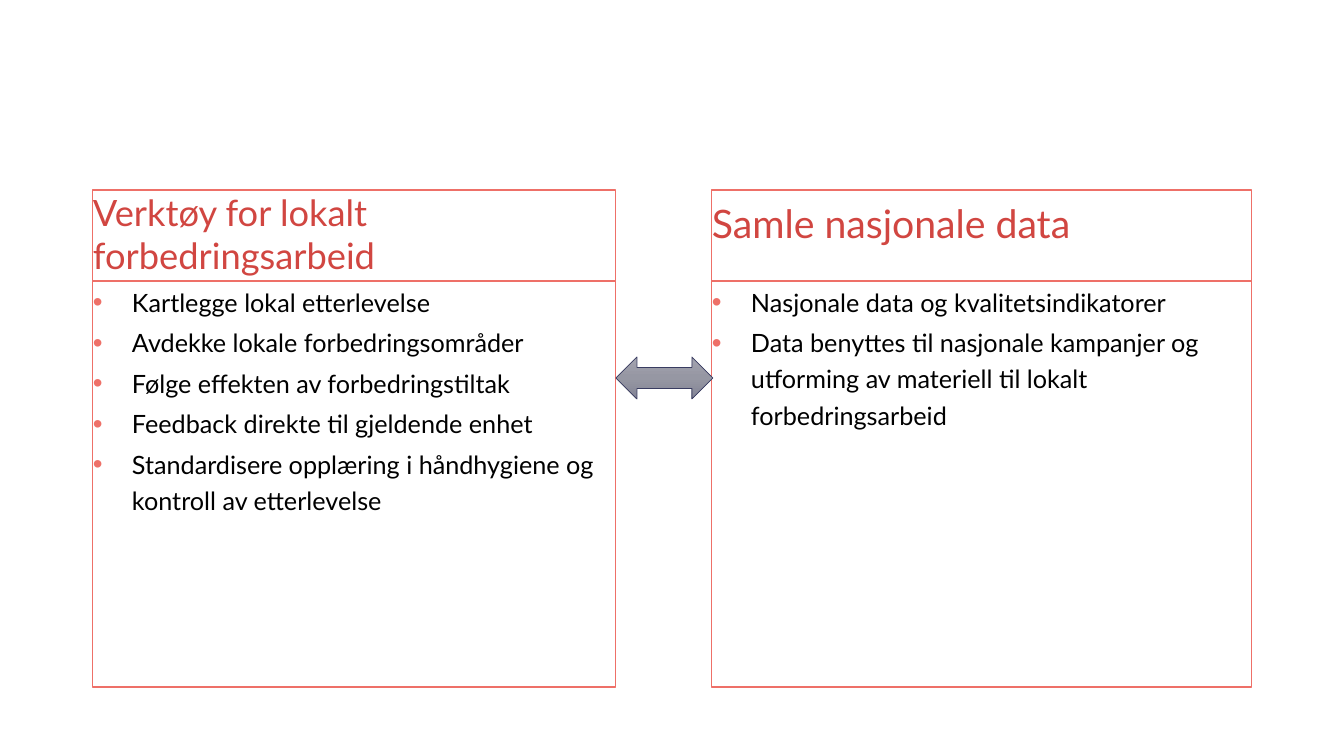
"""Build a slide comparing local improvement work with national data collection."""
import copy

import pptx
import pptx.dml.color
import pptx.enum.shapes
import pptx.enum.text
import pptx.oxml
import pptx.oxml.ns
import pptx.util

PX = 914400 / 100.8
FONT = "Lato"
COLORS = {"border": "EE7068", "heading": "D14641", "text": "000000", "arrow line": "393C61"}
ARROW_STOPS = ["A3A3AF", "9697A3", "838495"]
TOP, HEADING_H, LIST_H, INDENT = 190, 91, 406, 39
COLUMNS = [
    (93, 523, "Verktøy for lokalt forbedringsarbeid", 25.9, 1.0, [
        "Kartlegge lokal etterlevelse",
        "Avdekke lokale forbedringsområder",
        "Følge effekten av forbedringstiltak",
        "Feedback direkte til gjeldende enhet",
        "Standardisere opplæring i håndhygiene og kontroll av etterlevelse",
    ]),
    (712, 540, "Samle nasjonale data", 28, 1.2, [
        "Nasjonale data og kvalitetsindikatorer",
        "Data benyttes til nasjonale kampanjer og utforming av materiell til lokalt forbedringsarbeid",
    ]),
]


def px(n):
    return pptx.util.Emu(round(n * PX))


def rgb(value):
    return pptx.dml.color.RGBColor.from_string(value)


prs = pptx.Presentation()
prs.slide_width, prs.slide_height = px(1344), px(756)
slide = prs.slides.add_slide(prs.slide_layouts[4])
title, *bodies = slide.placeholders
title.element.getparent().remove(title.element)

for i, (left, width, heading, heading_size, heading_spacing, items) in enumerate(COLUMNS):
    parts = [
        (TOP, HEADING_H, [heading], heading_size, heading_spacing, "heading"),
        (TOP + HEADING_H, LIST_H, items, 18, 1.2, "text"),
    ]
    for s, (top, height, lines, size, spacing, color) in zip(bodies[2 * i:2 * i + 2], parts):
        s.left, s.top, s.width, s.height = px(left), px(top), px(width), px(height)
        s.line.color.rgb = rgb(COLORS["border"])
        s.line.width = pptx.util.Pt(0.75)
        tf = s.text_frame
        tf.margin_left = tf.margin_top = tf.margin_right = tf.margin_bottom = 0
        tf.word_wrap = True
        tf.auto_size = pptx.enum.text.MSO_AUTO_SIZE.NONE
        tf.vertical_anchor = pptx.enum.text.MSO_ANCHOR.TOP
        tf.text = "\n".join(lines)
        for p in tf.paragraphs:
            p.line_spacing = spacing
            p.space_before = pptx.util.Pt(0)
            p.space_after = pptx.util.Pt(3)
            if color == "text":
                pPr = p._p.get_or_add_pPr()
                pPr.set("marL", str(px(INDENT)))
                pPr.set("indent", str(-px(INDENT)))
                ns = pptx.oxml.ns.nsdecls("a")
                for xml in (
                    f'<a:buClr {ns}><a:srgbClr val="{COLORS["border"]}"/></a:buClr>',
                    f'<a:buSzPct {ns} val="110000"/>',
                    f'<a:buFont {ns} typeface="Arial"/>',
                    f'<a:buChar {ns} char="•"/>',
                ):
                    pPr.append(pptx.oxml.parse_xml(xml))
            for r in p.runs:
                r.font.name = FONT
                r.font.size = pptx.util.Pt(size)
                r.font.bold = False
                r.font.color.rgb = rgb(COLORS[color])

arrow = slide.shapes.add_shape(
    pptx.enum.shapes.MSO_SHAPE.LEFT_RIGHT_ARROW, px(616), px(357), px(97), px(42))
arrow.shadow.inherit = False
arrow.line.color.rgb = rgb(COLORS["arrow line"])
arrow.line.width = pptx.util.Pt(0.5)
arrow.fill.gradient()
arrow.fill.gradient_angle = 270
first = arrow.element.xpath(".//a:gs")[0]
middle = copy.deepcopy(first)
middle.set("pos", "50000")
first.addnext(middle)
for stop, color in zip(arrow.fill.gradient_stops, ARROW_STOPS):
    stop.color.rgb = rgb(color)

prs.save("out.pptx")
